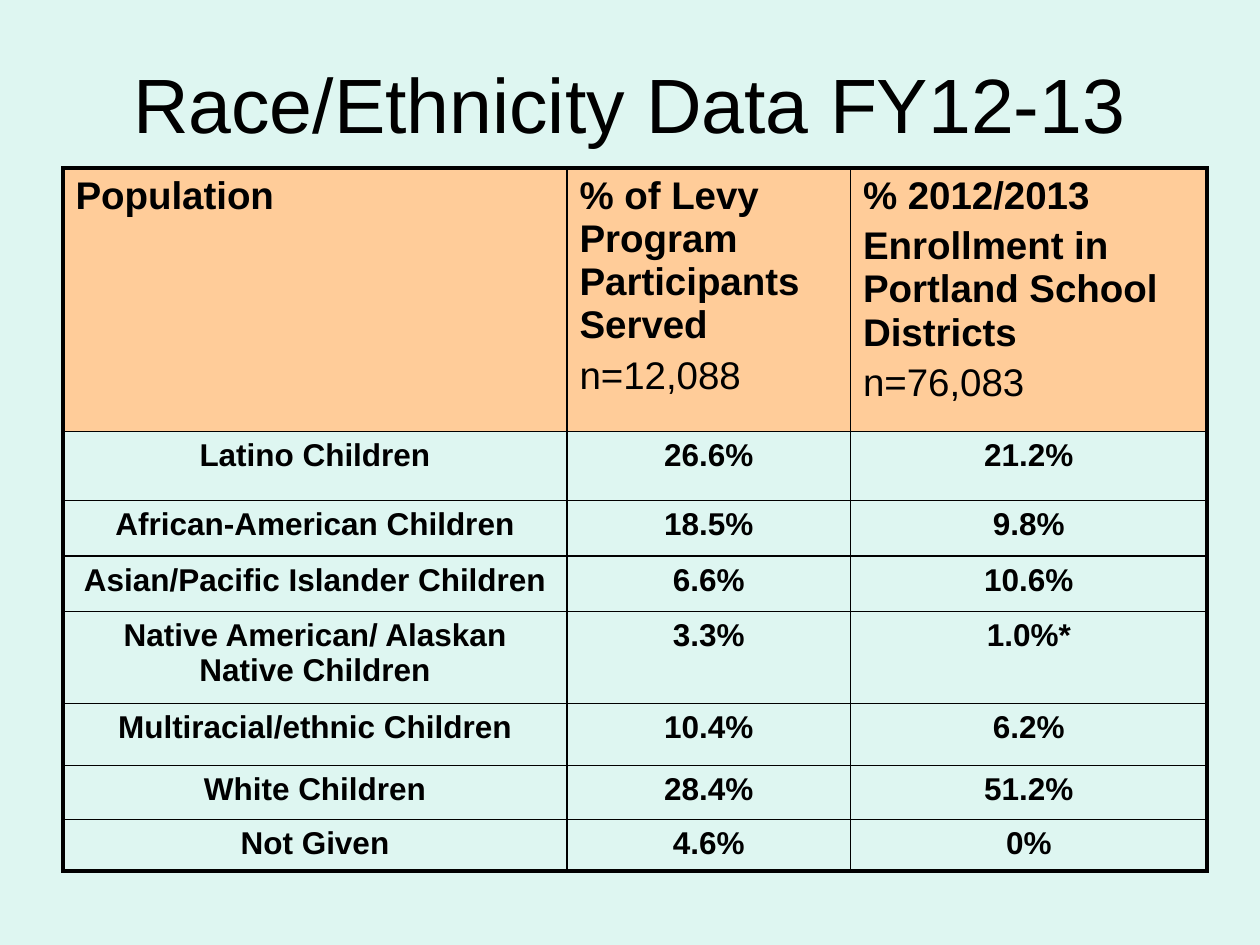
"""Build the Race/Ethnicity Data slide with its enrollment table."""
from lxml.etree import SubElement
from pptx import Presentation
from pptx.dml.color import RGBColor
from pptx.enum.text import MSO_ANCHOR, PP_ALIGN
from pptx.oxml.ns import qn
from pptx.util import Pt

BLACK = RGBColor(0x00, 0x00, 0x00)
MINT = RGBColor(0xDE, 0xF6, 0xF1)
PEACH = RGBColor(0xFF, 0xCC, 0x99)
THIN, THICK = Pt(1), Pt(2.25)

ROWS = [
    ("Population",
     "% of Levy Program Participants Served\nn=12,088",
     "% 2012/2013\nEnrollment in Portland School Districts\nn=76,083"),
    ("Latino Children", "26.6%", "21.2%"),
    ("African-American Children", "18.5%", "9.8%"),
    ("Asian/Pacific Islander Children", "6.6%", "10.6%"),
    ("Native American/ Alaskan Native Children", "3.3%", "1.0%*"),
    ("Multiracial/ethnic Children", "10.4%", "6.2%"),
    ("White Children", "28.4%", "51.2%"),
    ("Not Given", "4.6%", "0%"),
]
COL_WIDTHS = [288, 162, 203.8]
ROW_HEIGHTS = [150.5, 39.6, 31.7, 31.7, 52.6, 35.3, 31, 29.5]


def format_run(r, size, bold):
    r.font.name = "Arial"
    r.font.size = Pt(size)
    r.font.bold = bold
    r.font.color.rgb = BLACK


def add_border(cell, side, width):
    ln = SubElement(cell._tc.get_or_add_tcPr(), qn(f"a:ln{side}"), w=str(width))
    fill = SubElement(ln, qn("a:solidFill"))
    SubElement(fill, qn("a:srgbClr"), val=str(BLACK))


prs = Presentation()
prs.slide_width, prs.slide_height = Pt(720), Pt(540)
s = prs.slides.add_slide(prs.slide_layouts[5])
s.background.fill.solid()
s.background.fill.fore_color.rgb = MINT

title = s.shapes.title
title.left, title.top, title.width, title.height = Pt(36), Pt(21.6), Pt(648), Pt(74.4)
tf = title.text_frame
tf.text = "Race/Ethnicity Data FY12-13"
tf.vertical_anchor = MSO_ANCHOR.MIDDLE
p = tf.paragraphs[0]
p.alignment = PP_ALIGN.CENTER
format_run(p.runs[0], 44, False)

table = s.shapes.add_table(len(ROWS), len(COL_WIDTHS), Pt(36), Pt(96),
                           Pt(sum(COL_WIDTHS)), Pt(sum(ROW_HEIGHTS))).table
table.first_row = False
table.horz_banding = False
for col, width in zip(table.columns, COL_WIDTHS):
    col.width = Pt(width)
for row, height in zip(table.rows, ROW_HEIGHTS):
    row.height = Pt(height)

last_row, last_col = len(ROWS) - 1, len(COL_WIDTHS) - 1
for i, texts in enumerate(ROWS):
    for j, text in enumerate(texts):
        cell = table.cell(i, j)
        edges = {"L": j == 0, "R": j == last_col, "T": i == 0, "B": i == last_row}
        for side, outer in edges.items():
            add_border(cell, side, THICK if outer else THIN)
        if i == 0:
            cell.fill.solid()
            cell.fill.fore_color.rgb = PEACH
        else:
            cell.fill.background()
        cell.text_frame.text = text
        for k, p in enumerate(cell.text_frame.paragraphs):
            p.alignment = PP_ALIGN.LEFT if i == 0 else PP_ALIGN.CENTER
            p.space_before = Pt(4.4 if k else 0)
            format_run(p.runs[0], 22 if i == 0 else 18, not p.text.startswith("n="))

prs.save("out.pptx")
